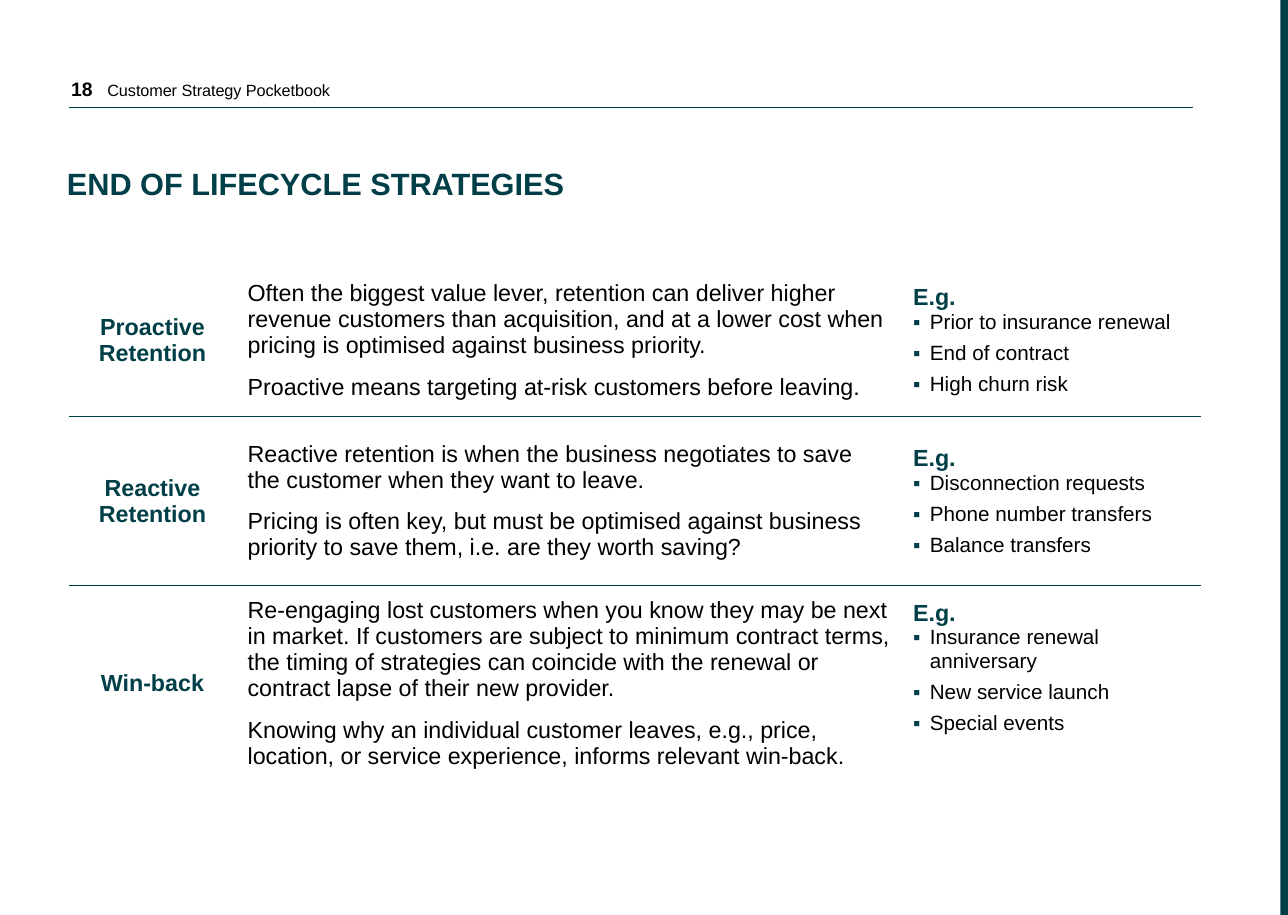
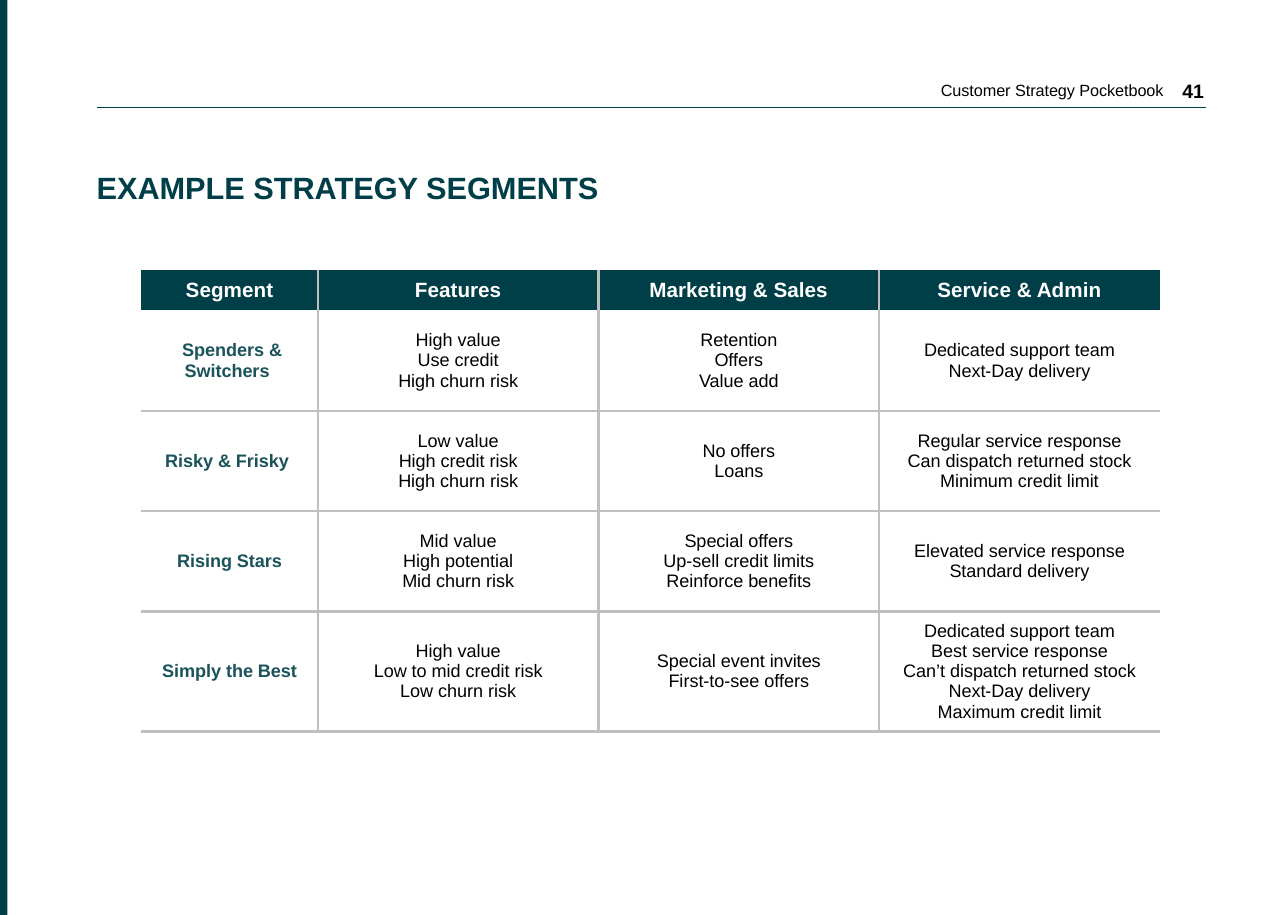
from lxml import etree
from pptx import Presentation
from pptx.dml.color import RGBColor
from pptx.enum.shapes import MSO_CONNECTOR, MSO_SHAPE
from pptx.enum.text import MSO_ANCHOR, PP_ALIGN
from pptx.oxml.ns import qn
from pptx.util import Inches, Mm, Pt

LEFT, CENTER, RIGHT = PP_ALIGN.LEFT, PP_ALIGN.CENTER, PP_ALIGN.RIGHT
MIDDLE = MSO_ANCHOR.MIDDLE
RECTANGLE = MSO_SHAPE.RECTANGLE
STRAIGHT = MSO_CONNECTOR.STRAIGHT

FONT = "Arial"
TEAL, SOFT_TEAL = "003F48", "1A535B"
BLACK, WHITE, GREY = "000000", "FFFFFF", "BFBFBF"
SLIDE_WIDTH, SLIDE_HEIGHT = Mm(176), Mm(125)
STRIP_WIDTH = Inches(0.04)
RULE_TOP = 0.58
BOOK_TITLE = "Customer Strategy Pocketbook"
INSETS = (1 / 16, 1 / 32, 1 / 16, 1 / 32)

# Boxes are left, top, width, height; the rule is its two ends.
LEFT_PAGE = {
    "align": LEFT,
    "title": (0.36, 0.85, 4.92, 0.3),
    "number": (0.32, 0.36, 0.33, 0.24),
    "book": (0.48, 0.38, 2.73, 0.21),
    "rule": (0.37, 6.42),
    "strip": SLIDE_WIDTH - STRIP_WIDTH,
}
RIGHT_PAGE = {
    "align": RIGHT,
    "title": (0.52, 0.87, 4.4, 0.3),
    "number": (6.21, 0.37, 0.33, 0.24),
    "book": (3.63, 0.38, 2.73, 0.21),
    "rule": (0.52, 6.49),
    "strip": 0,
}

STRATEGIES = [
    ("Proactive Retention",
     ["Often the biggest value lever, retention can deliver higher revenue customers than "
      "acquisition, and at a lower cost when pricing is optimised against business priority.",
      "Proactive means targeting at-risk customers before leaving."],
     ["Prior to insurance renewal", "End of contract", "High churn risk"]),
    ("Reactive Retention",
     ["Reactive retention is when the business negotiates to save the customer when they "
      "want to leave.",
      "Pricing is often key, but must be optimised against business priority to save them, "
      "i.e. are they worth saving?"],
     ["Disconnection requests", "Phone number transfers", "Balance transfers"]),
    ("Win-back",
     ["Re-engaging lost customers when you know they may be next in market. If customers are "
      "subject to minimum contract terms, the timing of strategies can coincide with the "
      "renewal or contract lapse of their new provider.",
      "Knowing why an individual customer leaves, e.g., price, location, or service "
      "experience, informs relevant win-back."],
     ["Insurance renewal anniversary", "New service launch", "Special events"]),
]

SEGMENT_HEADINGS = ["Segment", "Features", "Marketing & Sales", "Service & Admin"]
SEGMENTS = [
    (" Spenders & Switchers ",
     ["High value", "Use credit", "High churn risk"],
     ["Retention", "Offers", "Value add"],
     ["Dedicated support team", "Next-Day delivery"]),
    ("Risky & Frisky ",
     ["Low value", "High credit risk", "High churn risk"],
     ["No offers", "Loans"],
     ["Regular service response", "Can dispatch returned stock", "Minimum credit limit"]),
    ("Rising Stars",
     ["Mid value", "High potential", "Mid churn risk"],
     ["Special offers", "Up-sell credit limits", "Reinforce benefits"],
     ["Elevated service response", "Standard delivery"]),
    ("Simply the Best",
     ["High value", "Low to mid credit risk", "Low churn risk"],
     ["Special event invites", "First-to-see offers"],
     ["Dedicated support team", "Best service response", "Can’t dispatch returned stock",
      "Next-Day delivery", "Maximum credit limit"]),
]


def rgb(value):
    return RGBColor.from_string(value)


def add_bullet(paragraph, color, indent=0.09):
    properties = paragraph._p.get_or_add_pPr()
    properties.set("marL", str(Inches(indent)))
    properties.set("indent", str(-Inches(indent)))
    bullet_color = etree.SubElement(properties, qn("a:buClr"))
    etree.SubElement(bullet_color, qn("a:srgbClr"), val=color)
    etree.SubElement(properties, qn("a:buFont"), typeface=FONT)
    etree.SubElement(properties, qn("a:buChar"), char="▪")


def write(frame, lines, size=9, color=BLACK, bold=False, align=LEFT,
          after=0, line_spacing=None, bullet=None):
    """Append one paragraph per line, using the empty first paragraph if there is one."""
    for line in lines:
        paragraph = frame.paragraphs[-1]
        if paragraph.runs:
            paragraph = frame.add_paragraph()
        paragraph.alignment = align
        paragraph.space_after = Pt(after)
        if line_spacing:
            paragraph.line_spacing = line_spacing
        if bullet:
            add_bullet(paragraph, bullet)
        run = paragraph.add_run()
        run.text = line
        run.font.name = FONT
        run.font.size = Pt(size)
        run.font.bold = bold
        run.font.color.rgb = rgb(color)


def set_insets(target, insets):
    (target.margin_left, target.margin_top,
     target.margin_right, target.margin_bottom) = map(Inches, insets)


def add_text(slide, box, text, insets=INSETS, **text_format):
    frame = slide.shapes.add_textbox(*map(Inches, box)).text_frame
    frame.word_wrap = True
    frame.vertical_anchor = MIDDLE
    set_insets(frame, insets)
    write(frame, [text], **text_format)


def add_page(presentation, side, title, number):
    """Add a slide with the running head, rule, title and outer strip of its side."""
    slide = presentation.slides.add_slide(presentation.slide_layouts[6])
    add_text(slide, side["title"], title, insets=(0, 0.03, 0.06, 0.03),
             size=11.9, color=TEAL, bold=True, line_spacing=0.9)
    add_text(slide, side["number"], number, size=7.5, bold=True, align=side["align"])
    add_text(slide, side["book"], BOOK_TITLE, insets=(0.1, 0.05, 0.1, 0.05),
             size=6.3, align=side["align"])

    start, end = side["rule"]
    rule = slide.shapes.add_connector(
        STRAIGHT, Inches(start), Inches(RULE_TOP), Inches(end), Inches(RULE_TOP))
    rule.line.color.rgb = rgb(TEAL)
    rule.line.width = Pt(0.5)
    etree.SubElement(rule._element.spPr, qn("a:effectLst"))

    strip = slide.shapes.add_shape(RECTANGLE, side["strip"], 0, STRIP_WIDTH, SLIDE_HEIGHT)
    strip.shadow.inherit = False
    strip.fill.solid()
    strip.fill.fore_color.rgb = rgb(TEAL)
    strip.line.fill.background()
    return slide


def add_plain_table(slide, box, widths, heights):
    """Add a table whose cells have no banding, centred vertically."""
    graphic_frame = slide.shapes.add_table(len(heights), len(widths), *map(Inches, box))
    table = graphic_frame.table
    table.first_row = table.horz_banding = False
    for column, width in zip(table.columns, widths):
        column.width = Inches(width)
    for row, height in zip(table.rows, heights):
        row.height = Inches(height)
    graphic_frame.width, graphic_frame.height = map(Inches, box[2:])
    for cell in table.iter_cells():
        cell.vertical_anchor = MIDDLE
        set_insets(cell, INSETS)
    return table


def style_cell(cell, color, width, sides, fill=None):
    """Draw borders on the named sides (L, R, T, B), clear the others, and fill."""
    properties = cell._tc.get_or_add_tcPr()
    for side in "LRTB":
        border = etree.SubElement(properties, qn(f"a:ln{side}"), w=str(Pt(width)))
        if side in sides:
            solid = etree.SubElement(border, qn("a:solidFill"))
            etree.SubElement(solid, qn("a:srgbClr"), val=color)
        else:
            etree.SubElement(border, qn("a:noFill"))
    if fill:
        cell.fill.solid()
        cell.fill.fore_color.rgb = rgb(fill)
    else:
        cell.fill.background()


def add_strategy_table(slide, box):
    table = add_plain_table(slide, box, [0.9, 3.58, 1.61], [0.82, 0.91, 1.02])
    last = len(STRATEGIES) - 1
    for index, (name, description, examples) in enumerate(STRATEGIES):
        name_cell, description_cell, example_cell = table.rows[index].cells
        write(name_cell.text_frame, [name], color=TEAL, bold=True, align=CENTER)
        write(description_cell.text_frame, description, after=6)
        write(example_cell.text_frame, ["E.g."], color=TEAL, bold=True)
        write(example_cell.text_frame, examples, size=8, after=3, bullet=TEAL)
        sides = ("T" if index > 0 else "") + ("B" if index < last else "")
        for cell in table.rows[index].cells:
            style_cell(cell, TEAL, 0.75, sides)
    # The last examples sit higher than the middle of their tall row.
    table.cell(last, 2).margin_bottom = Inches(0.2)


def add_segment_table(slide, box):
    table = add_plain_table(slide, box, [0.95] + [1.51] * 3, [0.22] + [0.54] * 3 + [0.58])
    last = len(SEGMENT_HEADINGS) - 1
    for column, heading in enumerate(SEGMENT_HEADINGS):
        sides = ("L" if column > 0 else "") + ("R" if column < last else "")
        header_cell = table.cell(0, column)
        write(header_cell.text_frame, [heading], size=8, color=WHITE, bold=True, align=CENTER)
        style_cell(header_cell, GREY, 1, sides, fill=TEAL)
        for row, segment in enumerate(SEGMENTS, start=1):
            cell = table.cell(row, column)
            if column == 0:
                write(cell.text_frame, [segment[0]], size=7, color=SOFT_TEAL,
                      bold=True, align=CENTER)
            else:
                write(cell.text_frame, segment[column], size=7, align=CENTER)
            style_cell(cell, GREY, 1, sides + ("TB" if row > 1 else "B"))


def main():
    presentation = Presentation()
    presentation.slide_width = SLIDE_WIDTH
    presentation.slide_height = SLIDE_HEIGHT
    strategies = add_page(presentation, LEFT_PAGE, "END OF LIFECYCLE STRATEGIES", "18")
    add_strategy_table(strategies, (0.37, 1.42, 6.08, 2.77))
    segments = add_page(presentation, RIGHT_PAGE, "EXAMPLE STRATEGY SEGMENTS", "41")
    add_segment_table(segments, (0.76, 1.45, 5.49, 2.48))
    presentation.save("out.pptx")


if __name__ == "__main__":
    main()
